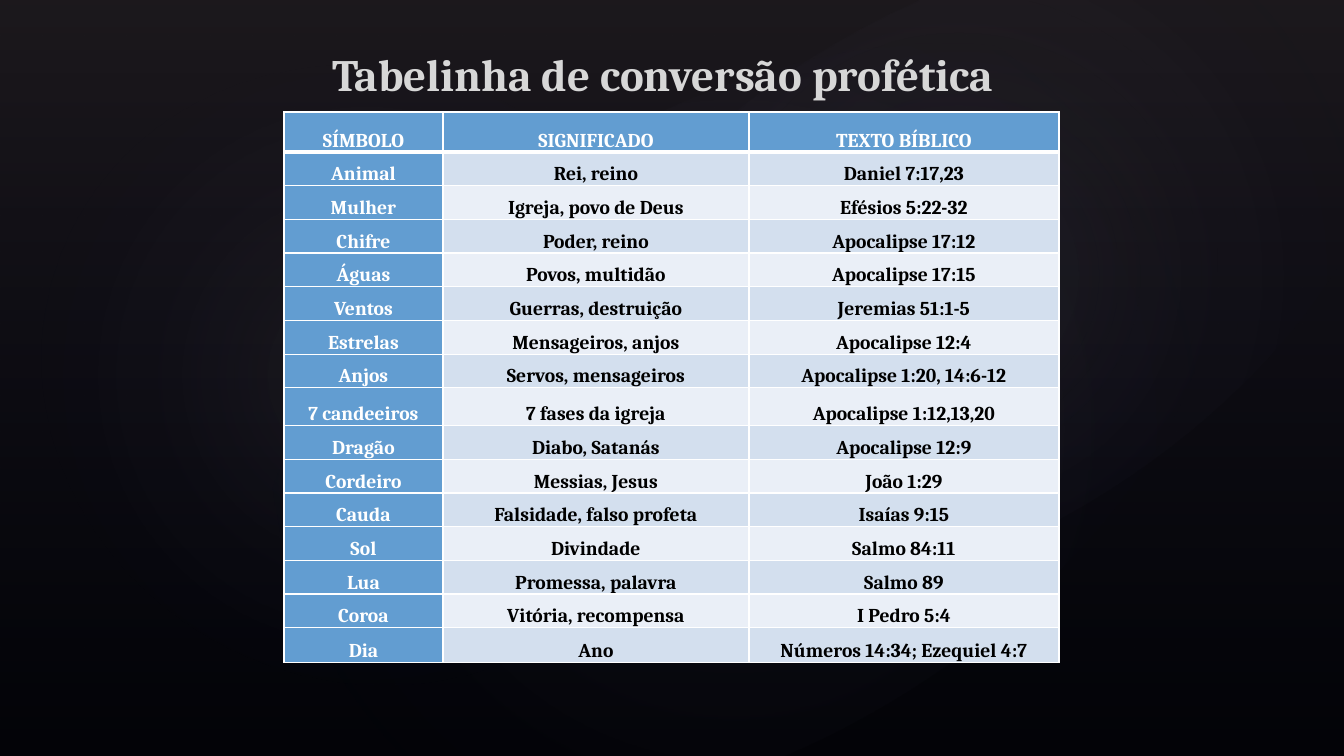
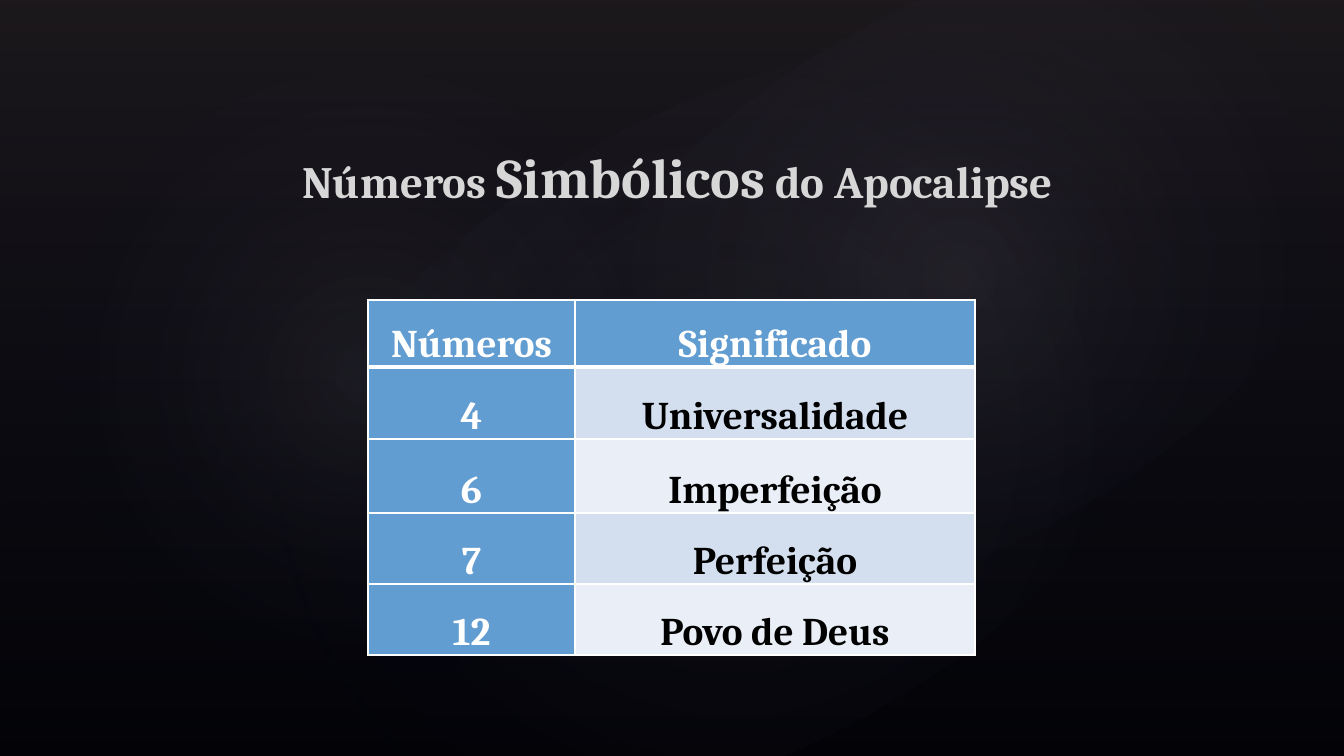
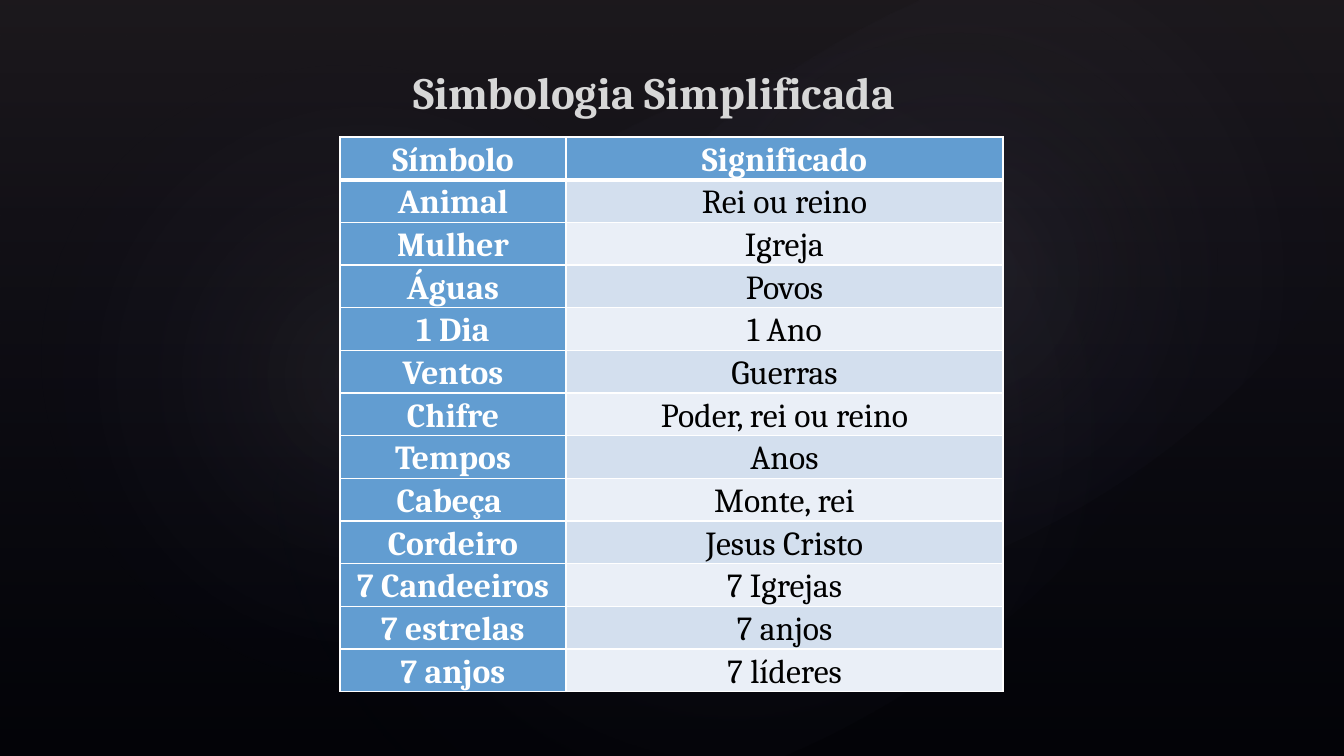
from dataclasses import dataclass

from pptx import Presentation
from pptx.dml.color import RGBColor as RGB
from pptx.enum.shapes import MSO_SHAPE as Shape
from pptx.enum.shapes import PP_PLACEHOLDER as Kind
from pptx.enum.text import MSO_ANCHOR as Anchor
from pptx.enum.text import MSO_AUTO_SIZE as Fit
from pptx.enum.text import PP_ALIGN as Align
from pptx.oxml import parse_xml
from pptx.oxml.ns import nsdecls, qn
from pptx.util import Pt

SCALE = 914400 / 100.8


def px(n):
    return round(n * SCALE)


# Colours and type sizes
@dataclass(frozen=True)
class Theme:
    font: str = "Cambria"
    back: str = "000000"
    title: str = "D7D7D7"
    head: str = "629DD1"
    bands: tuple = ("D3DFEE", "EAEFF7")
    light: str = "FFFFFF"
    dark: str = "000000"
    haze: str = "504652"
    glow: str = "C4BCC6"
    navy: str = "242852"
    big: int = 40
    main: int = 32
    thin: int = 1
    thick: int = 3


def write(frame, text, size, color, font, bold=True, align=Align.CENTER):
    """Fill the first paragraph; text is a string or (string, size) runs."""
    para = frame.paragraphs[0]
    para.alignment = align
    runs = [(text, size)] if isinstance(text, str) else text
    for part, pts in runs:
        run = para.add_run()
        run.text = part
        run.font.size = Pt(pts)
        run.font.name = font
        run.font.bold = bold
        run.font.color.rgb = RGB.from_string(color)


def blend(shape, stops, shade):
    """Give a shape a see-through gradient; stops are (percent, colour, alpha)."""
    marks = "".join(
        f'<a:gs pos="{pos * 1000}"><a:srgbClr val="{color}">'
        f'<a:alpha val="{alpha * 1000}"/></a:srgbClr></a:gs>'
        for pos, color, alpha in stops)
    shape.fill.background()
    props = shape.element.spPr
    props.replace(props.find(qn("a:noFill")), parse_xml(
        f'<a:gradFill {nsdecls("a")} rotWithShape="1">'
        f'<a:gsLst>{marks}</a:gsLst>{shade}</a:gradFill>'))


def edge(cell, color, **sides):
    """Draw cell borders; sides map lnL, lnR, lnT, lnB to points."""
    props = cell._tc.get_or_add_tcPr()
    for i, (side, pts) in enumerate(sides.items()):
        props.insert(i, parse_xml(
            f'<a:{side} {nsdecls("a")} w="{Pt(pts)}"><a:solidFill>'
            f'<a:srgbClr val="{color}"/></a:solidFill></a:{side}>'))


class Deck:
    def __init__(self, theme):
        self.theme = theme
        self.prs = Presentation()
        self.prs.slide_width, self.prs.slide_height = px(1344), px(756)
        fill = self.prs.slide_master.background.fill
        fill.solid()
        fill.fore_color.rgb = RGB.from_string(theme.back)
        self.layout = self.prs.slide_layouts[5]
        for holder in list(self.layout.placeholders):
            if holder.placeholder_format.type != Kind.TITLE:
                holder.element.getparent().remove(holder.element)
        self.slide = None

    def page(self, text, box):
        first = self.slide is None
        self.slide = self.prs.slides.add_slide(self.layout)
        if first:
            self.scene()
        self.title(text, box)

    def shape(self, kind, box, turn=0):
        item = self.slide.shapes.add_shape(kind, *map(px, box))
        item.rotation = turn
        item.shadow.inherit = False
        item.line.fill.background()
        return item

    # Haze and glows, moved to the shared layout
    def scene(self):
        t = self.theme
        haze = self.shape(Shape.RECTANGLE, (0, 0, 1344, 756))
        blend(haze, [(0, t.haze, 36), (100, t.navy, 10)],
              '<a:lin ang="5400000" scaled="0"/>')
        items = [haze]
        for box, turn, alpha in (((202, 115, 1064, 629), 328.7, 7),
                                 ((61, 46, 611, 658), 294.3, 8),
                                 ((482, 13, 953, 524), 328.7, 8)):
            glow = self.shape(Shape.OVAL, box, turn)
            blend(glow, [(0, t.glow, alpha), (58, t.navy, 0)],
                  '<a:path path="circle"><a:fillToRect l="50000" t="50000"'
                  ' r="50000" b="50000"/></a:path>')
            items.append(glow)
        for i, item in enumerate(items):
            self.layout.shapes.element.insert(2 + i, item.element)

    def title(self, text, box):
        t = self.theme
        item = self.slide.shapes.title
        item.left, item.top, item.width, item.height = map(px, box)
        frame = item.text_frame
        frame.word_wrap = True
        frame.auto_size = Fit.NONE
        frame.vertical_anchor = Anchor.TOP
        write(frame, text, t.main, t.title, t.font, align=Align.LEFT)

    def table(self, left, top, cols, spans, rows, size, bold=True, pad=5):
        """Spans are (row count, total height), each shared out equally."""
        t = self.theme
        tall = [high / n for n, high in spans for _ in range(n)]
        grid = self.slide.shapes.add_table(
            len(rows), len(cols), px(left), px(top),
            px(sum(cols)), px(sum(tall))).table
        grid.first_row = grid.horz_banding = False
        for col, wide in zip(grid.columns, cols):
            col.width = px(wide)
        for r, (line, high) in enumerate(zip(rows, tall)):
            grid.rows[r].height = px(high)
            for c, text in enumerate(line):
                cell = grid.cell(r, c)
                key = r == 0 or c == 0
                cell.vertical_anchor = Anchor.BOTTOM
                cell.margin_left = cell.margin_right = px(pad)
                cell.margin_top = cell.margin_bottom = 0
                cell.fill.solid()
                cell.fill.fore_color.rgb = RGB.from_string(
                    t.head if key else t.bands[(r - 1) % 2])
                edge(cell, t.light, lnL=t.thin, lnR=t.thin,
                     lnT=t.thick if r == 1 else t.thin,
                     lnB=t.thick if r == 0 else t.thin)
                write(cell.text_frame, text, size,
                      t.light if key else t.dark, t.font, bold=key or bold)


SIGNS = [
    ("SÍMBOLO", "SIGNIFICADO", "TEXTO BÍBLICO"),
    ("Animal", "Rei, reino", "Daniel 7:17,23"),
    ("Mulher", "Igreja, povo de Deus", "Efésios 5:22-32"),
    ("Chifre", "Poder, reino", "Apocalipse 17:12"),
    ("Águas", "Povos, multidão", "Apocalipse 17:15"),
    ("Ventos", "Guerras, destruição", "Jeremias 51:1-5"),
    ("Estrelas", "Mensageiros, anjos", "Apocalipse 12:4"),
    ("Anjos", "Servos, mensageiros", "Apocalipse 1:20, 14:6-12"),
    ("7 candeeiros", "7 fases da igreja", "Apocalipse 1:12,13,20"),
    ("Dragão", "Diabo, Satanás", "Apocalipse 12:9"),
    ("Cordeiro", "Messias, Jesus", "João 1:29"),
    ("Cauda", "Falsidade, falso profeta", "Isaías 9:15"),
    ("Sol", "Divindade", "Salmo 84:11"),
    ("Lua", "Promessa, palavra", "Salmo 89"),
    ("Coroa", "Vitória, recompensa", "I Pedro 5:4"),
    ("Dia", "Ano", "Números 14:34; Ezequiel 4:7"),
]

NUMBERS = [
    ("Números", "Significado"),
    ("4", "Universalidade"),
    ("6", "Imperfeição"),
    ("7", "Perfeição"),
    ("12", "Povo de Deus"),
]

SIMPLE = [
    ("Símbolo", "Significado"),
    ("Animal", "Rei ou reino"),
    ("Mulher", "Igreja"),
    ("Águas", "Povos"),
    ("1 Dia", "1 Ano"),
    ("Ventos", "Guerras"),
    ("Chifre", "Poder, rei ou reino"),
    ("Tempos", "Anos"),
    ("Cabeça ", "Monte, rei"),
    ("Cordeiro", "Jesus Cristo"),
    ("7 Candeeiros", "7 Igrejas"),
    ("7 estrelas", "7 anjos"),
    ("7 anjos", "7 líderes"),
]


def main():
    theme = Theme()
    deck = Deck(theme)

    # Symbols with Bible texts
    deck.page("Tabelinha de conversão profética", (322, 42, 700, 95))
    deck.table(284, 112, (159, 306, 310),
               [(1, 40), (7, 236), (1, 38), (6, 202), (1, 35)],
               SIGNS, size=14)

    # Symbolic numbers
    deck.page([("Números ", theme.main), ("Simbólicos", theme.big),
               (" do Apocalipse", theme.main)], (292, 137, 818, 78))
    deck.table(368, 300, (207, 400),
               [(1, 67), (1, 72), (1, 74), (2, 142)], NUMBERS, size=28)

    # Simplified symbols
    deck.page("Simbologia Simplificada", (403, 60, 536, 65))
    deck.table(340, 137, (226, 437), [(13, 555)], SIMPLE,
               size=24, bold=False, pad=4)

    deck.prs.save("out.pptx")


if __name__ == "__main__":
    main()
